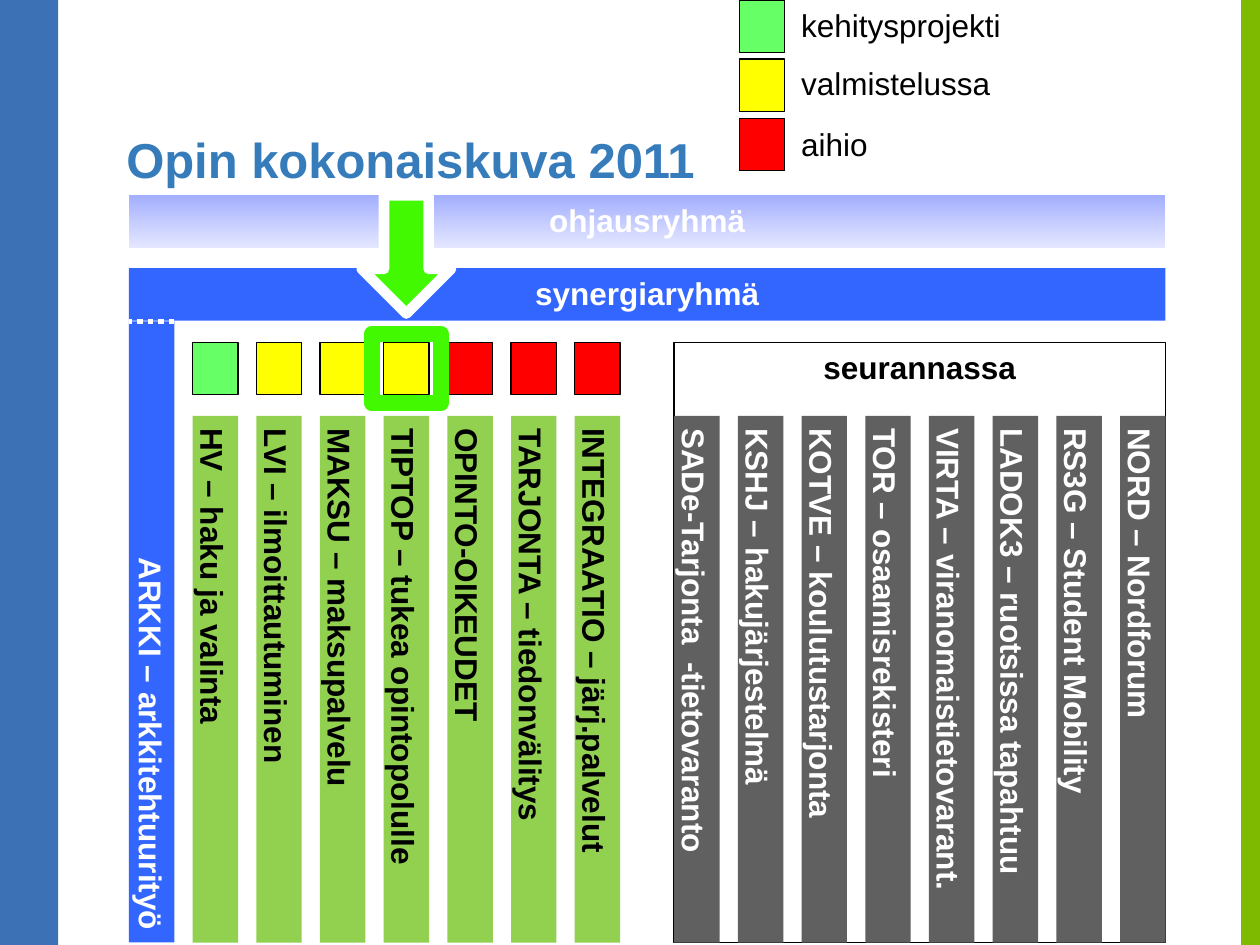
from dataclasses import dataclass

from lxml.etree import SubElement
from pptx import Presentation
from pptx.dml.color import RGBColor
from pptx.enum.dml import MSO_LINE
from pptx.enum.shapes import MSO_CONNECTOR, MSO_SHAPE
from pptx.enum.text import MSO_ANCHOR, MSO_AUTO_SIZE, PP_ALIGN
from pptx.oxml.ns import qn
from pptx.util import Pt


@dataclass(frozen=True)
class Theme:
    font: str = "Arial"
    title_size: int = 28
    text_size: int = 18
    title: str = "367CBB"
    left_band: str = "3C71B6"
    right_band: str = "7DBA00"
    black: str = "000000"
    white: str = "FFFFFF"
    steering_top: str = "A3AFFF"
    steering_bottom: str = "E4E7FF"
    synergy: str = "3366FF"
    project: str = "92D050"
    followed: str = "606060"
    development: str = "66FF66"
    preparation: str = "FFFF00"
    draft: str = "FF0000"
    highlight: str = "42F901"


@dataclass(frozen=True)
class Box:
    left: float
    top: float
    width: float
    height: float

    def inner(self, left, top, width, height):
        return Box(self.left + left, self.top + top, width, height)

    def turned(self):
        shift = (self.width - self.height) / 2
        return Box(self.left + shift, self.top - shift, self.height, self.width)

    def lengths(self):
        return Pt(self.left), Pt(self.top), Pt(self.width), Pt(self.height)


THEME = Theme()
COLUMN_WIDTH = 26
COLUMN_STEP = 36.4
ROW_HEIGHT = 30
STATUS_TOP = 84
COLUMN_TOP = 126
PROJECTS_LEFT = 36.4
FOLLOWED_LEFT = 311.6
CURRENT_PROJECT = 3

PROJECTS = [
    ("HV – haku ja valinta", THEME.development),
    ("LVI – ilmoittautuminen", THEME.preparation),
    ("MAKSU – maksupalvelu", THEME.preparation),
    ("TIPTOP – tukea opintopolulle", THEME.preparation),
    ("OPINTO-OIKEUDET", THEME.draft),
    ("TARJONTA – tiedonvälitys", THEME.draft),
    ("INTEGRAATIO – järj.palvelut", THEME.draft),
]
FOLLOWED = [
    "SADe-Tarjonta  -tietovaranto",
    "KSHJ – hakujärjestelmä",
    "KOTVE – koulutustarjonta",
    "TOR – osaamisrekisteri",
    "VIRTA – viranomaistietovarant.",
    "LADOK3 – ruotsissa tapahtuu",
    "RS3G – Student Mobility",
    "NORD – Nordforum",
]
LEGEND = [
    ("kehitysprojekti", THEME.development, 0),
    ("valmistelussa", THEME.preparation, 33),
    ("aihio", THEME.draft, 67.6),
]


def rgb(value):
    return RGBColor.from_string(value)


def write(shape, text, color, align=PP_ALIGN.LEFT, anchor=MSO_ANCHOR.TOP,
          size=THEME.text_size, bold=True):
    frame = shape.text_frame
    frame.word_wrap = True
    frame.vertical_anchor = anchor
    para = frame.paragraphs[0]
    para.text = text
    para.alignment = align
    para.font.name = THEME.font
    para.font.size = Pt(size)
    para.font.bold = bold
    para.font.color.rgb = rgb(color)


def add_block(shapes, box, fill=None, line=None, line_width=0.75, kind=MSO_SHAPE.RECTANGLE):
    shape = shapes.add_shape(kind, *box.lengths())
    shape.shadow.inherit = False
    if fill:
        shape.fill.solid()
        shape.fill.fore_color.rgb = rgb(fill)
    else:
        shape.fill.background()
    if line:
        shape.line.color.rgb = rgb(line)
        shape.line.width = Pt(line_width)
    else:
        shape.line.fill.background()
    return shape


def round_corners(shape):
    SubElement(shape._element.spPr.find(qn("a:ln")), qn("a:round"))


def add_column(shapes, box, text, fill, color, **layout):
    column = add_block(shapes, box.turned(), fill)
    column.rotation = 90
    write(column, text, color, **layout)


def add_side_bands(page, box):
    add_block(page.shapes, box.inner(0, 0, 33.2, box.height), THEME.left_band)
    add_block(page.shapes, box.inner(box.width - 10.8, 0, 10.8, box.height), THEME.right_band)


def add_title(page, box):
    title = page.shapes.title
    title.left, title.top, title.width, title.height = box.lengths()
    write(title, "Opin kokonaiskuva 2011", THEME.title,
          anchor=MSO_ANCHOR.MIDDLE, size=THEME.title_size)
    title.text_frame.auto_size = MSO_AUTO_SIZE.NONE


def add_group_bars(shapes, box):
    steering = add_block(shapes, box.inner(0, 0, box.width, ROW_HEIGHT), THEME.steering_top)
    steering.fill.gradient()
    steering.fill.gradient_angle = 270
    for stop, color in zip(steering.fill.gradient_stops,
                           (THEME.steering_top, THEME.steering_bottom)):
        stop.color.rgb = rgb(color)
    write(steering, "ohjausryhmä", THEME.white, PP_ALIGN.CENTER)

    synergy = add_block(shapes, box.inner(0, 41.6, box.width, ROW_HEIGHT), THEME.synergy)
    write(synergy, "synergiaryhmä", THEME.white, PP_ALIGN.CENTER)


def add_architecture(shapes, box):
    add_column(shapes, box, "ARKKI – arkkitehtuurityö", THEME.synergy, THEME.white,
               align=PP_ALIGN.RIGHT, anchor=MSO_ANCHOR.MIDDLE)
    seam = shapes.add_connector(MSO_CONNECTOR.STRAIGHT, Pt(box.left + box.width), Pt(box.top),
                                Pt(box.left), Pt(box.top))
    seam.line.color.rgb = rgb(THEME.white)
    seam.line.width = Pt(3)
    seam.line.dash_style = MSO_LINE.ROUND_DOT
    SubElement(seam._element.spPr, qn("a:effectLst"))


def add_projects(shapes, box):
    top = COLUMN_TOP - STATUS_TOP
    for index, (name, status) in enumerate(PROJECTS):
        left = index * COLUMN_STEP
        add_block(shapes, box.inner(left, 0, COLUMN_WIDTH, ROW_HEIGHT), status, THEME.black)
        add_column(shapes, box.inner(left, top, COLUMN_WIDTH, box.height - top),
                   name, THEME.project, THEME.black)


def add_followed(shapes, box):
    frame = add_block(shapes, box, line=THEME.black)
    write(frame, "seurannassa", THEME.black, PP_ALIGN.CENTER)
    top = COLUMN_TOP - STATUS_TOP
    for index, name in enumerate(FOLLOWED):
        add_column(shapes, box.inner(index * COLUMN_STEP, top, COLUMN_WIDTH, box.height - top),
                   name, THEME.followed, THEME.white)


def add_overview(page, box):
    shapes = page.shapes.add_group_shape().shapes
    add_group_bars(shapes, box)
    add_architecture(shapes, box.inner(0, 72, COLUMN_WIDTH, box.height - 72))
    height = box.height - STATUS_TOP
    add_projects(shapes, box.inner(PROJECTS_LEFT, STATUS_TOP, 244.4, height))
    add_followed(shapes, box.inner(FOLLOWED_LEFT, STATUS_TOP, box.width - FOLLOWED_LEFT, height))


def add_current_marker(page, box):
    frame = add_block(page.shapes, box.inner(-6.8, 79.2, 39.6, 39.6),
                      line=THEME.highlight, line_width=9)
    arrow = add_block(page.shapes, box.inner(-12.5, 0, 51, 67.6), THEME.highlight,
                      THEME.white, 6, MSO_SHAPE.DOWN_ARROW)
    for shape in (frame, arrow):
        round_corners(shape)


def add_legend(page, box):
    shapes = page.shapes.add_group_shape().shapes
    for index, (label, color, label_top) in enumerate(LEGEND):
        add_block(shapes, box.inner(0, index * 33.8, COLUMN_WIDTH, ROW_HEIGHT), color, THEME.black)
        text = shapes.add_textbox(*box.inner(28.3, label_top, box.width - 28.3, 29).lengths())
        write(text, label, THEME.black, bold=False)
        text.text_frame.auto_size = MSO_AUTO_SIZE.SHAPE_TO_FIT_TEXT


def main():
    deck = Presentation()
    deck.slide_width, deck.slide_height = Pt(720), Pt(540)
    page = deck.slides.add_slide(deck.slide_layouts[5])
    overview = Box(73.6, 111.6, 592.4, 427)
    add_side_bands(page, Box(0, 0, 720, 540))
    add_overview(page, overview)
    add_title(page, Box(65, 65.5, 497.5, 51))
    current_left = PROJECTS_LEFT + CURRENT_PROJECT * COLUMN_STEP
    add_current_marker(page, overview.inner(current_left, 0, COLUMN_WIDTH, overview.height))
    add_legend(page, Box(422.4, 0, 204, 97.6))
    deck.save("out.pptx")


if __name__ == "__main__":
    main()
